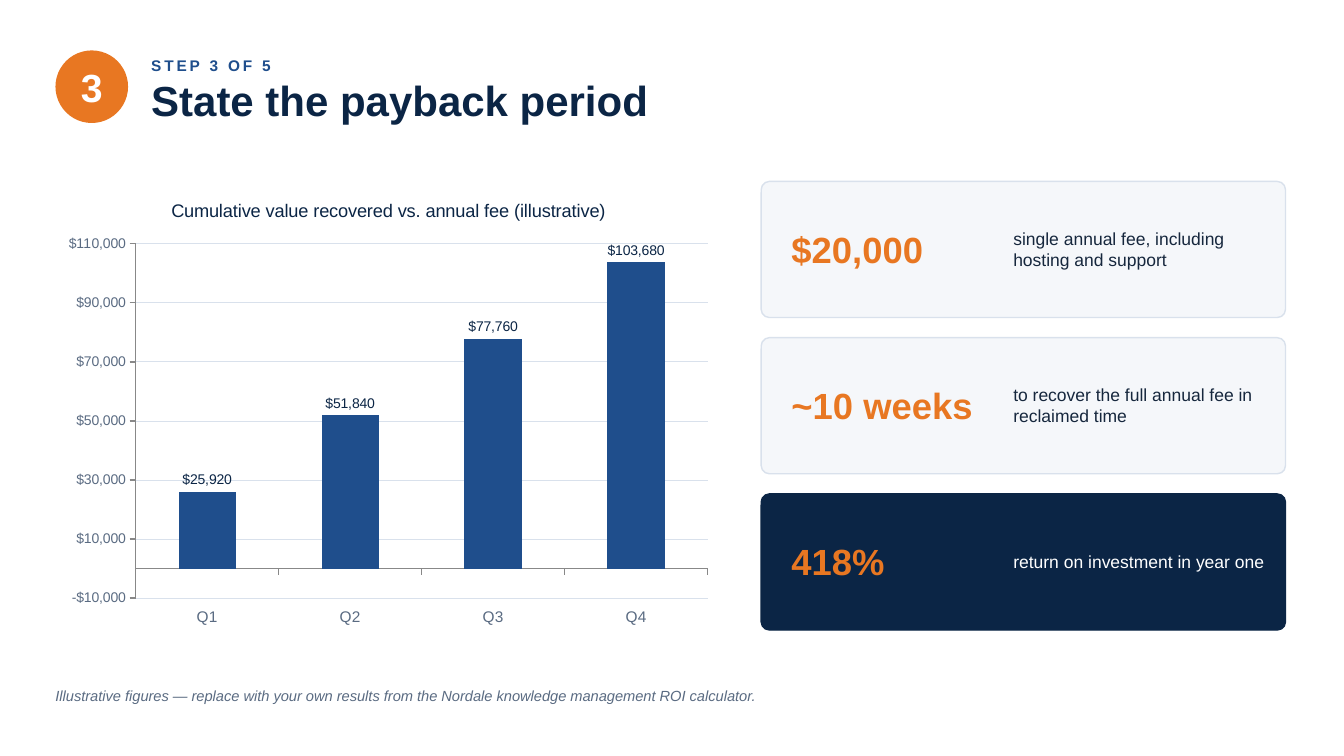
from dataclasses import dataclass

from pptx import Presentation
from pptx.chart.data import CategoryChartData
from pptx.dml.color import RGBColor
from pptx.enum.chart import (XL_CHART_TYPE, XL_LABEL_POSITION, XL_TICK_LABEL_POSITION,
                             XL_TICK_MARK)
from pptx.enum.shapes import MSO_SHAPE
from pptx.enum.text import MSO_ANCHOR, PP_ALIGN
from pptx.util import Inches, Pt

OVAL = MSO_SHAPE.OVAL
ROUND = MSO_SHAPE.ROUNDED_RECTANGLE
MIDDLE = MSO_ANCHOR.MIDDLE
LEFT, CENTER = PP_ALIGN.LEFT, PP_ALIGN.CENTER
COLUMN = XL_CHART_TYPE.COLUMN_CLUSTERED
OUT_END = XL_LABEL_POSITION.OUTSIDE_END
LOW = XL_TICK_LABEL_POSITION.LOW
TICK_OUT, TICK_NONE = XL_TICK_MARK.OUTSIDE, XL_TICK_MARK.NONE


@dataclass(frozen=True)
class Theme:
    font: str = "Arial"
    navy: str = "0B2545"
    blue: str = "1F4E8C"
    orange: str = "E87722"
    white: str = "FFFFFF"
    pale: str = "F5F7FA"
    rule: str = "D9E1EC"
    ink: str = "16273D"
    slate: str = "5A6B82"
    axis: str = "888888"
    badge: float = 28
    title: float = 30
    step: float = 11
    stat: float = 26
    body: float = 12.5
    note: float = 10.5
    head: float = 13
    label: float = 10
    cat: float = 11


T = Theme()
MONEY = r"\$#,##0"


def style(font, size, color, **extra):
    """Apply a type size, colour and further font attributes."""
    values = {"name": T.font, "size": Pt(size), "bold": False, **extra}
    for name, value in values.items():
        setattr(font, name, value)
    font.color.rgb = RGBColor.from_string(color)


def stroke(line, color, width):
    line.color.rgb = RGBColor.from_string(color)
    line.width = Pt(width)


def add_text(slide, box, lines, align=LEFT):
    """Each line is (text, size, color, font extras, letter spacing in points)."""
    frame = slide.shapes.add_textbox(*map(Inches, box)).text_frame
    values = {"margin_left": 0, "margin_right": 0, "margin_top": 0,
              "margin_bottom": 0, "word_wrap": True, "vertical_anchor": MIDDLE}
    for name, value in values.items():
        setattr(frame, name, value)
    for i, (text, size, color, extra, gap) in enumerate(lines):
        para = frame.add_paragraph() if i else frame.paragraphs[0]
        para.alignment = align
        run = para.add_run()
        run.text = text
        style(run.font, size, color, **extra)
        if gap:
            run.font._element.set("spc", str(gap * 100))


def add_panel(slide, kind, box, fill, edge=None):
    shape = slide.shapes.add_shape(kind, *map(Inches, box))
    shape.shadow.inherit = False
    shape.fill.solid()
    shape.fill.fore_color.rgb = RGBColor.from_string(fill)
    if edge:
        stroke(shape.line, edge, 1)
    else:
        shape.line.fill.background()
    return shape


def add_card(slide, top, stat, text, fill, edge, color):
    card = add_panel(slide, ROUND, (7.55, top, 5.2, 1.35), fill, edge)
    card.adjustments[0] = 0.06
    add_text(slide, (7.85, top + 0.12, 2.15, 1.1),
             [(stat, T.stat, T.orange, {"bold": True}, 0)])
    add_text(slide, (10.05, top + 0.12, 2.55, 1.1), [(text, T.body, color, {}, 0)])


def set_axis(axis, size):
    values = {"major_tick_mark": TICK_OUT, "minor_tick_mark": TICK_NONE}
    for name, value in values.items():
        setattr(axis, name, value)
    style(axis.tick_labels.font, size, T.slate)
    stroke(axis.format.line, T.axis, 1)


def add_bars(slide, box, title, cats, vals):
    data = CategoryChartData(number_format=MONEY)
    data.categories = cats
    data.add_series("Recovered value", vals)
    chart = slide.shapes.add_chart(COLUMN, *map(Inches, box), data).chart
    chart.has_legend = False
    style(chart.font, T.label, T.navy)

    # Title
    frame = chart.chart_title.text_frame
    frame.text = title
    style(frame.paragraphs[0].runs[0].font, T.head, T.navy)
    chart.chart_title.include_in_layout = False

    # Axes
    base, scale = chart.category_axis, chart.value_axis
    set_axis(base, T.cat)
    set_axis(scale, T.label)
    base.tick_label_position = LOW
    limits = {"minimum_scale": -10000, "maximum_scale": 110000, "major_unit": 20000}
    for name, value in limits.items():
        setattr(scale, name, value)
    scale.tick_labels.number_format = MONEY
    scale.tick_labels.number_format_is_linked = False
    stroke(scale.major_gridlines.format.line, T.rule, 0.5)

    # Bars and their labels
    plot = chart.plots[0]
    plot.gap_width = 150
    plot.vary_by_categories = False
    bars = plot.series[0]
    bars.format.fill.solid()
    bars.format.fill.fore_color.rgb = RGBColor.from_string(T.blue)
    labels = bars.data_labels
    values = {"show_value": True, "number_format": MONEY,
              "number_format_is_linked": False, "position": OUT_END}
    for name, value in values.items():
        setattr(labels, name, value)
    style(labels.font, T.label, T.navy)


def main():
    deck = Presentation()
    deck.slide_width, deck.slide_height = Inches(13.33), Inches(7.5)
    slide = deck.slides.add_slide(deck.slide_layouts[6])

    # Heading with step badge
    badge = (0.55, 0.5, 0.72, 0.72)
    add_panel(slide, OVAL, badge, T.orange)
    add_text(slide, badge, [("3", T.badge, T.white, {"bold": True}, 0)], CENTER)
    add_text(slide, (1.5, 0.42, 11.2, 0.95), [
        ("STEP 3 OF 5", T.step, T.blue, {"bold": True}, 2),
        ("State the payback period", T.title, T.navy, {"bold": True}, 0),
    ])

    # Chart
    add_bars(slide, (0.55, 1.8, 6.6, 4.5),
             "Cumulative value recovered vs. annual fee (illustrative)",
             ["Q1", "Q2", "Q3", "Q4"], [25920 * n for n in range(1, 5)])

    # Key figures
    light = (T.pale, T.rule, T.ink)
    dark = (T.navy, T.navy, T.white)
    cards = [
        ("$20,000", "single annual fee, including hosting and support", light),
        ("~10 weeks", "to recover the full annual fee in reclaimed time", light),
        ("418%", "return on investment in year one", dark),
    ]
    for i, (stat, text, look) in enumerate(cards):
        add_card(slide, 1.8 + 1.55 * i, stat, text, *look)

    # Footnote
    note = ("Illustrative figures — replace with your own results from the "
            "Nordale knowledge management ROI calculator.")
    add_text(slide, (0.55, 6.75, 12.2, 0.3),
             [(note, T.note, T.slate, {"italic": True}, 0)])

    deck.save("out.pptx")


if __name__ == "__main__":
    main()
